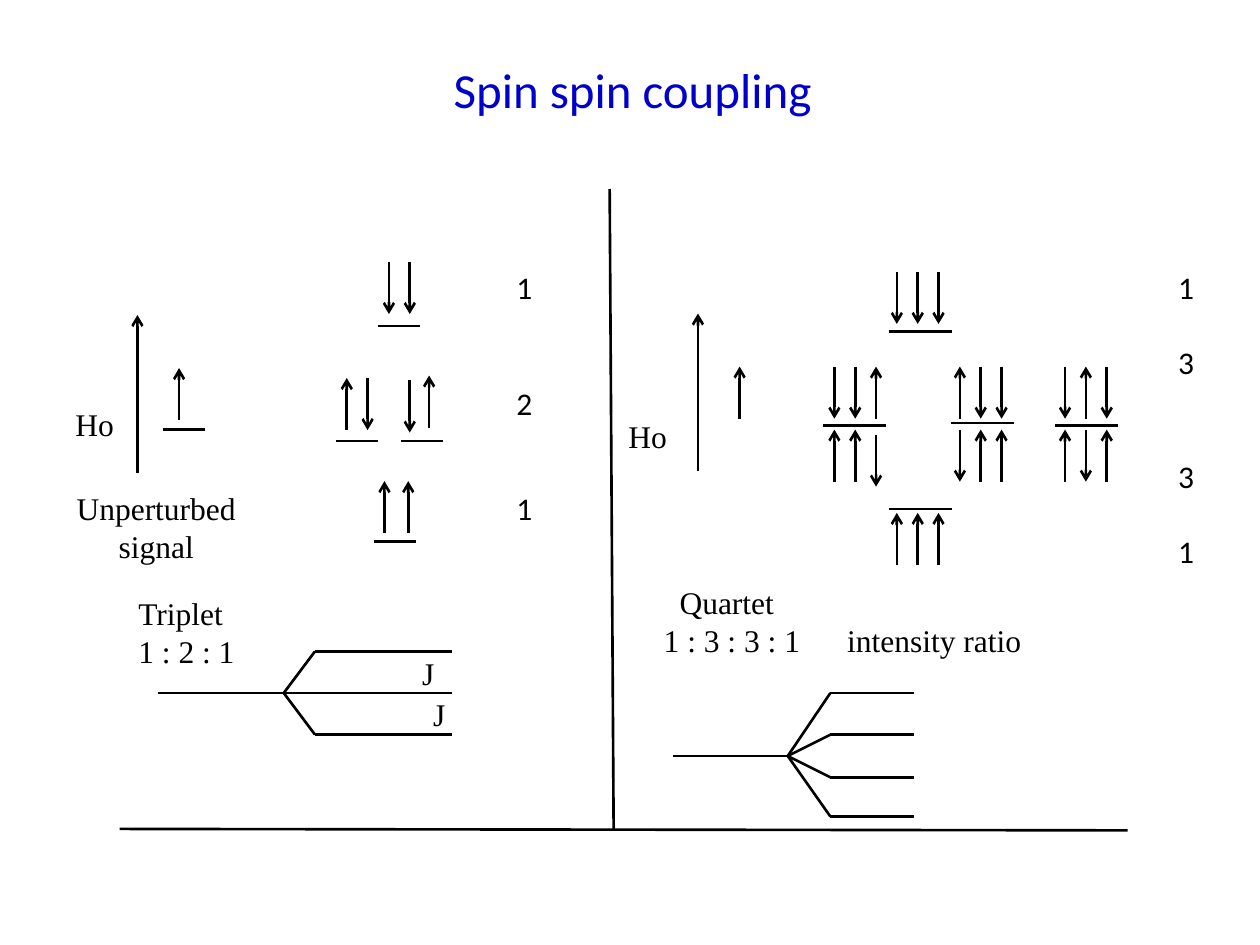
from lxml import etree
from pptx import Presentation
from pptx import util as u
from pptx.dml.color import RGBColor
from pptx.enum import shapes, text
from pptx.oxml import ns

BLACK = RGBColor(0x00, 0x00, 0x00)
BLUE = RGBColor(0x00, 0x00, 0xCC)
SANS, SERIF = "Calibri", "Times New Roman"


class SpinSlide:
    """Drawing style and current slide; all lengths are in centimetres."""

    line_width = u.Pt(1.5)
    text_size = 18
    spin_length = 1.05
    spin_step = 0.42

    def __init__(self, presentation):
        self.slide = presentation.slides.add_slide(presentation.slide_layouts[5])

    def fill_text(self, shape, content, font, size, color, align):
        frame = shape.text_frame
        frame.text = content
        frame.word_wrap = False
        frame.auto_size = text.MSO_AUTO_SIZE.NONE
        frame.vertical_anchor = text.MSO_ANCHOR.TOP
        for paragraph in frame.paragraphs:
            paragraph.alignment = align
            for run in paragraph.runs:
                run.font.name = font
                run.font.size = u.Pt(size)
                run.font.color.rgb = color
        return frame.paragraphs

    def title(self, content, left, top, width, height):
        shape = self.slide.shapes.title
        shape.left, shape.top = u.Cm(left), u.Cm(top)
        shape.width, shape.height = u.Cm(width), u.Cm(height)
        self.fill_text(shape, content, SANS, 28, BLUE, text.PP_ALIGN.LEFT)

    def label(self, content, left, top, width, height=1.02, font=SERIF,
              align=text.PP_ALIGN.LEFT):
        shape = self.slide.shapes.add_textbox(
            u.Cm(left), u.Cm(top), u.Cm(width), u.Cm(height))
        return self.fill_text(shape, content, font, self.text_size, BLACK, align)

    def line(self, x1, y1, x2, y2, arrow=False):
        connector = self.slide.shapes.add_connector(
            shapes.MSO_CONNECTOR.STRAIGHT, u.Cm(x1), u.Cm(y1), u.Cm(x2), u.Cm(y2))
        connector.line.color.rgb = BLACK
        connector.line.width = self.line_width
        properties = connector.element.spPr
        if arrow:
            outline = properties.find(ns.qn("a:ln"))
            etree.SubElement(outline, ns.qn("a:tailEnd"), type="arrow")
        etree.SubElement(properties, ns.qn("a:effectLst"))

    def spins(self, left, top, pattern, step=spin_step):
        """Row of spin arrows: u points up, d points down."""
        for index, direction in enumerate(pattern):
            x = left + index * step
            start, end = top, top + self.spin_length
            if direction == "u":
                start, end = end, start
            self.line(x, start, x, end, arrow=True)

    def level(self, left, y, width):
        self.line(left, y, left + width, y)

    def tree(self, start, fork, split, end, y, branches):
        """Signal that forks into one line per branch height."""
        self.line(start, y, end if y in branches else fork, y)
        for branch in branches:
            if branch != y:
                self.line(fork, y, split, branch)
                self.line(split, branch, end, branch)


def main():
    presentation = Presentation()
    presentation.slide_width, presentation.slide_height = u.Cm(25.4), u.Cm(19.05)
    page = SpinSlide(presentation)
    page.title("Spin spin coupling", 8.89, 1.07, 7.8, 1.45)

    # Divider and base line
    page.line(12.29, 3.81, 12.37, 16.71)
    page.line(2.41, 16.71, 22.73, 16.74)

    # Field axes
    page.line(2.77, 9.53, 2.77, 6.35, arrow=True)
    page.line(14.07, 9.5, 14.07, 6.32, arrow=True)
    page.label("Ho", 1.27, 8.05, 1.3)
    page.label("Ho", 12.42, 8.28, 1.3)

    # Triplet: spins and energy levels
    for left, top, pattern in [(3.61, 7.42, "u"), (7.84, 5.28, "dd"),
                               (6.99, 7.62, "ud"), (8.26, 7.67, "d"),
                               (8.65, 7.57, "u")]:
        page.spins(left, top, pattern)
    page.spins(7.75, 9.7, "uu", step=0.48)
    for left, y in [(3.28, 8.66), (7.62, 6.57), (6.78, 8.89),
                    (8.08, 8.89), (7.54, 10.92)]:
        page.level(left, y, 0.85)

    # Quartet: spins and energy levels
    for left, top, pattern in [(14.91, 7.39, "u"), (18.08, 5.48, "ddd"),
                               (16.82, 7.39, "ddu"), (19.35, 7.39, "udd"),
                               (21.47, 7.39, "dud"), (16.82, 8.66, "uu"),
                               (17.66, 8.76, "d"), (19.35, 8.66, "duu"),
                               (21.47, 8.66, "udu"), (18.08, 10.34, "uuu")]:
        page.spins(left, top, pattern)
    for left, y in [(17.92, 6.68), (16.6, 8.58), (19.17, 8.53),
                    (21.26, 8.58), (17.92, 10.26)]:
        page.level(left, y, 1.27)

    # Intensities beside the levels
    for number, top in [("1", 5.28), ("2", 7.62), ("1", 9.73)]:
        page.label(number, 10.16, top, 0.84, font=SANS)
    numbers = page.label("1\n3\n3\n1", 23.5, 5.28, 0.84, 6.4, font=SANS)
    for paragraph, gap in zip(numbers[1:], (21.5, 43, 21.5)):
        paragraph.space_before = u.Pt(gap)

    # Splitting trees
    page.tree(3.18, 5.72, 6.35, 9.12, 13.97, (13.13, 13.97, 14.81))
    page.tree(13.56, 15.88, 16.74, 18.42, 15.24, (13.97, 14.81, 15.67, 16.46))
    page.label("J", 8.26, 13.06, 0.76)
    page.label("J", 8.48, 13.89, 0.76)

    # Captions
    page.label("Unperturbed\nsignal", 1.27, 9.73, 3.76, 1.8,
               align=text.PP_ALIGN.CENTER)
    page.label("Triplet\n1 : 2 : 1", 2.54, 11.86, 2.46, 1.8)
    quartet, ratio = page.label("Quartet\n1 : 3 : 3 : 1\tintensity ratio",
                                13.13, 11.63, 7.95, 1.8)
    quartet._p.get_or_add_pPr().set("marL", str(u.Cm(0.32)))
    tabs = etree.SubElement(ratio._p.get_or_add_pPr(), ns.qn("a:tabLst"))
    etree.SubElement(tabs, ns.qn("a:tab"), pos=str(u.Cm(3.7)), algn="l")

    presentation.save("out.pptx")


if __name__ == "__main__":
    main()
